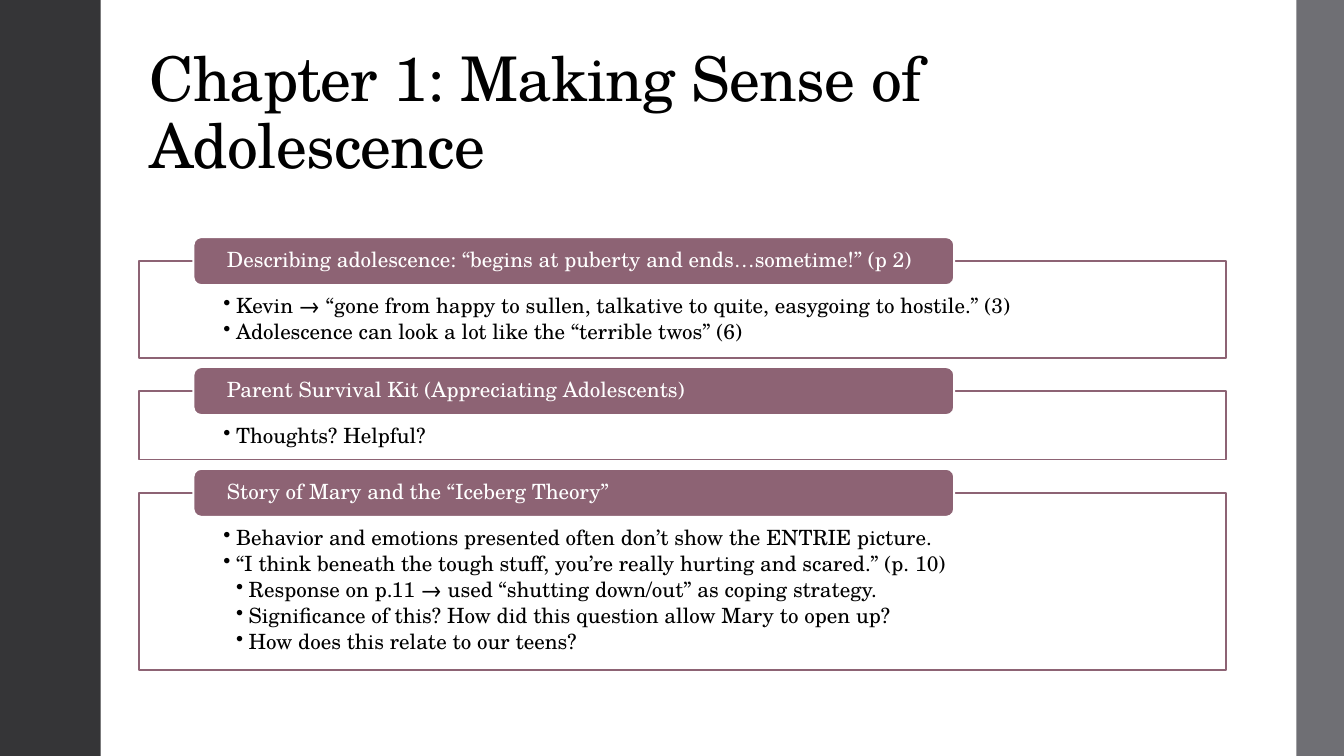
from lxml import etree
from pptx import Presentation
from pptx.dml.color import RGBColor
from pptx.enum.shapes import MSO_SHAPE
from pptx.enum.text import MSO_ANCHOR, MSO_AUTO_SIZE, PP_ALIGN
from pptx.oxml.ns import qn
from pptx.util import Pt

RECT, ROUND = MSO_SHAPE.RECTANGLE, MSO_SHAPE.ROUNDED_RECTANGLE
TOP, MIDDLE, BOTTOM = MSO_ANCHOR.TOP, MSO_ANCHOR.MIDDLE, MSO_ANCHOR.BOTTOM
LEFT, FIXED = PP_ALIGN.LEFT, MSO_AUTO_SIZE.NONE
TITLE_ONLY = 5

GROUPS = [
    ("Describing adolescence: “begins at puberty and ends…sometime!” (p 2)", 69.1, [
        (1, "Kevin → “gone from happy to sullen, talkative to quite, easygoing to hostile.” (3)"),
        (1, "Adolescence can look a lot like the “terrible twos” (6)")]),
    ("Parent Survival Kit (Appreciating Adolescents)", 49, [
        (1, "Thoughts? Helpful?")]),
    ("Story of Mary and the “Iceberg Theory”", 126.7, [
        (1, "Behavior and emotions presented often don’t show the ENTRIE picture."),
        (1, "“I think beneath the tough stuff, you’re really hurting and scared.” (p. 10)"),
        (2, "Response on p.11 → used “shutting down/out” as coping strategy."),
        (2, "Significance of this? How did this question allow Mary to open up?"),
        (2, "How does this relate to our teens?")]),
]


def color(code):
    return RGBColor.from_string(code)


class Deck:
    """Holds the style and the current slide."""
    font, black, white, plum = "TeX Gyre Schola", "000000", "FFFFFF", "8D6374"
    left, width, indent = 99.4, 776.2, 9

    def __init__(self):
        self.prs = Presentation()
        self.prs.slide_width, self.prs.slide_height = Pt(960), Pt(540)
        self.slide = self.prs.slides.add_slide(self.prs.slide_layouts[TITLE_ONLY])
        fill = self.slide.background.fill
        fill.solid()
        fill.fore_color.rgb = color(self.white)

    def shape(self, kind, box, fill, line=None, weight=0):
        shape = self.slide.shapes.add_shape(kind, *map(Pt, box))
        shape.shadow.inherit = False
        shape.fill.solid()
        shape.fill.fore_color.rgb = color(fill)
        if line:
            shape.line.color.rgb = color(line)
            shape.line.width = Pt(weight)
        else:
            shape.line.fill.background()
        return shape

    def frame(self, shape, anchor, insets):
        frame = shape.text_frame
        frame.word_wrap, frame.auto_size = True, FIXED
        frame.vertical_anchor = anchor
        (frame.margin_left, frame.margin_top,
         frame.margin_right, frame.margin_bottom) = map(Pt, insets)
        return frame

    def text(self, para, text, size, ink, after=0):
        para.alignment, para.line_spacing = LEFT, 0.9
        para.space_before, para.space_after = Pt(0), Pt(after)
        run = para.add_run()
        run.text = text
        run.font.name, run.font.size = self.font, Pt(size)
        run.font.color.rgb = color(ink)
        return run

    def title(self, text):
        title = self.slide.shapes.title
        title.left, title.top, title.width, title.height = map(
            Pt, (self.left, 28.8, self.width, 104.4))
        frame = self.frame(title, BOTTOM, (7.2, 3.6, 7.2, 3.6))
        run = self.text(frame.paragraphs[0], text, 44, self.black)
        run._r.get_or_add_rPr().set("spc", "-50")

    def bullet(self, para, level):
        props = para._p.get_or_add_pPr()
        props.set("marL", str(Pt(self.indent * level)))
        props.set("indent", str(-Pt(self.indent)))
        etree.SubElement(props, qn("a:buChar")).set("char", "•")

    def panel(self, top, height, items):
        panel = self.shape(RECT, (self.left, top, self.width, height),
                           self.white, self.plum, 1.1)
        frame = self.frame(panel, TOP, (60.2, 24.5, 60.2, 8.6))
        for num, (level, text) in enumerate(items):
            para = frame.add_paragraph() if num else frame.paragraphs[0]
            self.text(para, text, 15, self.black, 2.4)
            self.bullet(para, level)

    def label(self, top, text):
        label = self.shape(ROUND, (138.2, top, 543.4, 34.3),
                           self.plum, self.white, 1.35)
        frame = self.frame(label, MIDDLE, (22.3, 0, 22.3, 0))
        self.text(frame.paragraphs[0], text, 15, self.white)


def main():
    deck = Deck()
    deck.shape(RECT, (0, 0, 72, 540), "353537")
    deck.shape(RECT, (926, 0, 34, 540), "6F6F74")
    deck.title("Chapter 1: Making Sense of Adolescence")
    top = 186.5
    for head, height, items in GROUPS:
        deck.panel(top, height, items)
        deck.label(top - 17.1, head)
        top += height + 23.7
    deck.prs.save("out.pptx")


if __name__ == "__main__":
    main()
